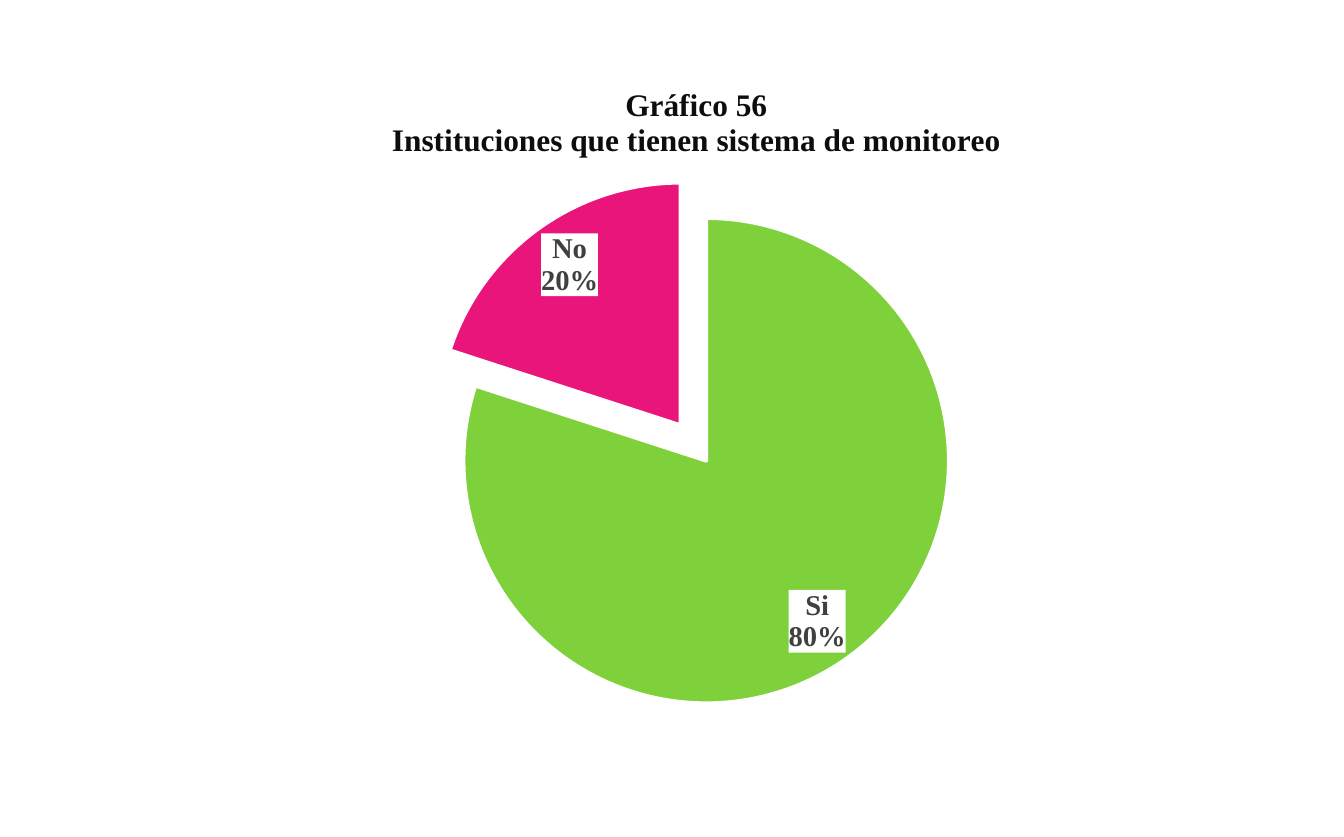
from dataclasses import dataclass

from lxml import etree
from pptx import Presentation
from pptx import util as u
from pptx.chart import data as chart_data
from pptx.chart.chart import Chart
from pptx.dml.color import RGBColor
from pptx.enum import chart as kinds
from pptx.oxml import parse_xml
from pptx.oxml.ns import nsdecls, qn

FONT = "Times New Roman"
COLOURS = {
    "green": "7FD13B",
    "pink": "EA157A",
    "white": "FFFFFF",
    "title": "0D0D0D",
    "label": "404040",
    "base": "000000",
}
TITLE_LINES = ("Gráfico 56", "Instituciones que tienen sistema de monitoreo")


@dataclass(frozen=True)
class Slice:
    name: str
    value: float
    colour: str
    explosion: int


SLICES = (
    Slice("Si", 80, "green", 0),
    Slice("No", 20, "pink", 18),
)


def colour_of(name: str) -> RGBColor:
    return RGBColor.from_string(COLOURS[name])


def chart_xml(tag: str, content: str = "", attributes: str = "") -> etree._Element:
    return parse_xml(
        f"<c:{tag} {nsdecls('c', 'a')} {attributes}>{content}</c:{tag}>"
    )


def set_font(font, size: float, colour: str, bold: bool) -> None:
    values = {"name": FONT, "size": u.Pt(size), "bold": bold}
    for attribute, value in values.items():
        setattr(font, attribute, value)
    font.color.rgb = colour_of(colour)


def make_layout(inner: bool = False, **fractions: float) -> etree._Element:
    target = '<c:layoutTarget val="inner"/>' if inner else ""
    modes = "".join(f'<c:{key}Mode val="edge"/>' for key in "xy")
    sizes = "".join(
        f'<c:{key} val="{value}"/>' for key, value in fractions.items()
    )
    return chart_xml(
        "layout", f"<c:manualLayout>{target}{modes}{sizes}</c:manualLayout>"
    )


def replace_layout(parent: etree._Element, layout: etree._Element, index: int) -> None:
    for old in parent.findall(qn("c:layout")):
        parent.remove(old)
    parent.insert(index, layout)


def add_title(chart: Chart) -> None:
    chart.has_title = True
    frame = chart.chart_title.text_frame
    for index, line in enumerate(TITLE_LINES):
        para = frame.paragraphs[0] if index == 0 else frame.add_paragraph()
        span = para.add_run()
        span.text = line
        set_font(span.font, 24, "title", True)
    replace_layout(chart.chart_title._element, make_layout(x=0.24, y=0.03), 1)


def style_slices(chart: Chart) -> None:
    series = chart.plots[0].series[0]
    for index, item in enumerate(SLICES):
        point = series.points[index]
        point.format.fill.solid()
        point.format.fill.fore_color.rgb = colour_of(item.colour)
        point.format.line.color.rgb = colour_of("white")
        point.format.line.width = u.Pt(3)
        if item.explosion:
            shape_format = series._element.findall(qn("c:dPt"))[index].find(qn("c:spPr"))
            shape_format.addprevious(
                chart_xml("explosion", attributes=f'val="{item.explosion}"')
            )


def add_labels(chart: Chart) -> None:
    labels = chart.plots[0].series[0].data_labels
    values = {
        "show_category_name": True,
        "show_percentage": True,
        "show_value": False,
        "number_format": "0%",
        "number_format_is_linked": False,
        "position": kinds.XL_LABEL_POSITION.INSIDE_END,
    }
    for attribute, value in values.items():
        setattr(labels, attribute, value)
    set_font(labels.font, 21.9, "label", True)
    element = labels._element
    fill = f'<a:solidFill><a:srgbClr val="{COLOURS["white"]}"/></a:solidFill>'
    element.find(qn("c:txPr")).addprevious(chart_xml("spPr", fill))
    flags = [child for child in element if etree.QName(child).localname in
             ("showPercent", "showBubbleSize")]
    flags[-1].addnext(chart_xml("separator", "\n"))


def add_pie(page) -> None:
    numbers = chart_data.CategoryChartData()
    numbers.categories = [item.name for item in SLICES]
    numbers.add_series("Series 1", [item.value for item in SLICES])
    chart = page.shapes.add_chart(
        kinds.XL_CHART_TYPE.PIE,
        u.Pt(82), u.Pt(48.2), u.Pt(899.3), u.Pt(516.2),
        numbers,
    ).chart
    chart.has_legend = False
    set_font(chart.font, 10, "base", False)
    add_title(chart)
    style_slices(chart)
    add_labels(chart)
    plot_area = chart._chartSpace.chart.plotArea
    layout = make_layout(inner=True, x=0.3, y=0.23, w=0.42, h=0.72)
    replace_layout(plot_area, layout, 0)


def main() -> None:
    deck = Presentation()
    deck.slide_width = u.Pt(1028.88)
    deck.slide_height = u.Pt(640.8)
    page = deck.slides.add_slide(deck.slide_layouts[6])
    add_pie(page)
    deck.save("out.pptx")


if __name__ == "__main__":
    main()
